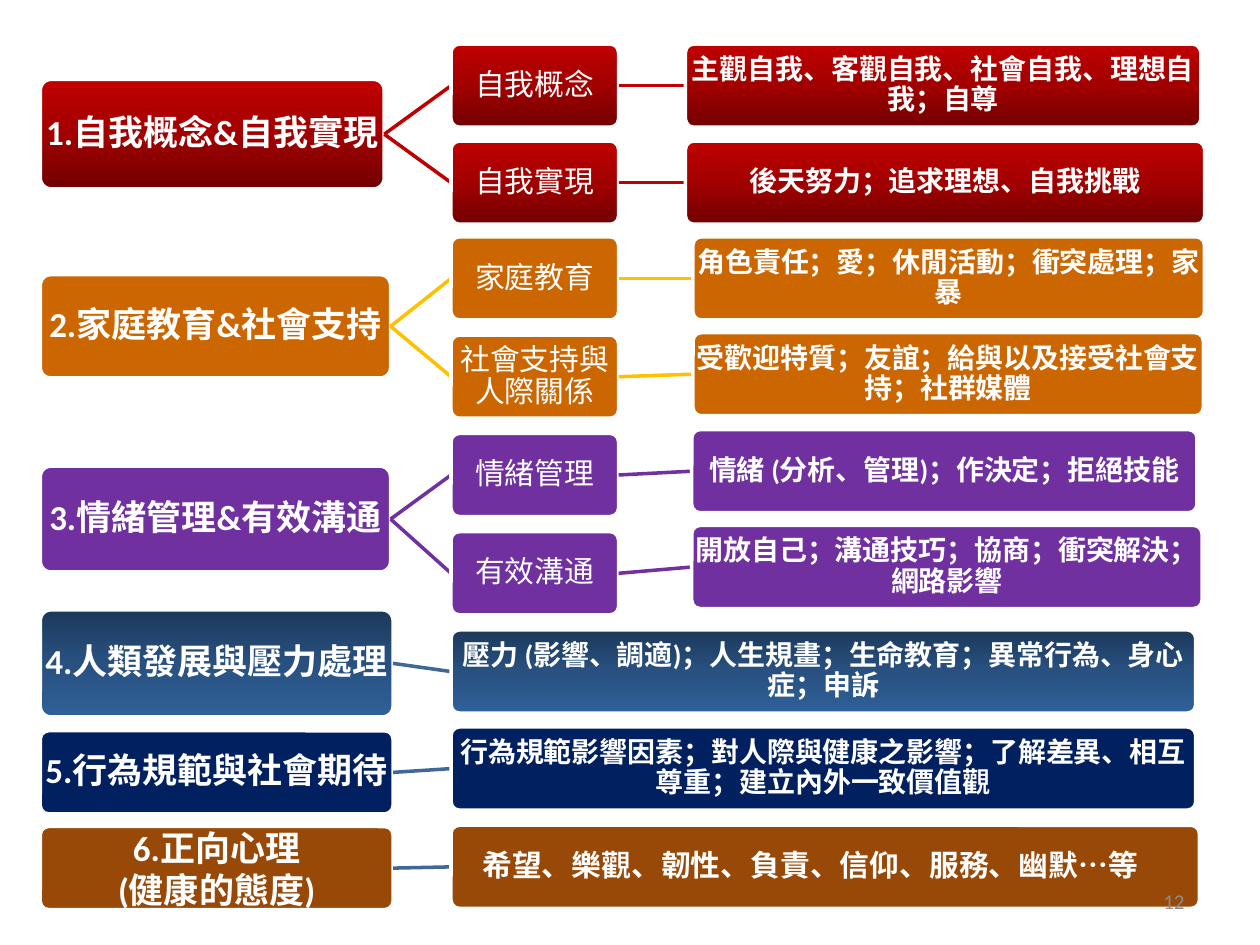
from lxml import etree
from pptx import Presentation
from pptx.dml.color import RGBColor
from pptx.enum.shapes import MSO_CONNECTOR, MSO_SHAPE
from pptx.enum.text import MSO_ANCHOR, PP_ALIGN
from pptx.oxml.ns import qn
from pptx.util import Pt

ROUNDED = MSO_SHAPE.ROUNDED_RECTANGLE
STRAIGHT = MSO_CONNECTOR.STRAIGHT
MIDDLE = MSO_ANCHOR.MIDDLE
CENTER, RIGHT = PP_ALIGN.CENTER, PP_ALIGN.RIGHT
LEFT_SIDE, RIGHT_SIDE = 1, 3

SCALE = 9144  # EMU per px, 100 px to the inch
TOPIC_X, BRANCH_X = 32, 358
BRANCH_WIDTH, ROW_HEIGHT = 133, 66

# Fills: a colour, or gradient colours (0, 50, 100 %) with an angle
RED = (("720000", "A20000", "C00000"), 90)
BLUE = (("1C395B", "285181", "306099"), 270)

# Topic text, top, width, height, fill, line colour, branches
# Branch: text, top, then detail text, left, top, width
SPLIT_TOPICS = [
    ("1.自我概念&自我實現", 63, 273, 87, RED, "C00000", [
        ("自我概念", 35, "主觀自我、客觀自我、社會自我、理想自我；自尊", 544, 35, 409),
        ("自我實現", 112, "後天努力；追求理想、自我挑戰", 544, 112, 412)]),
    ("2.家庭教育&社會支持", 218, 278, 82, "CC6600", "FFC000", [
        ("家庭教育", 188, "角色責任；愛；休閒活動；衝突處理；家暴", 550, 188, 406),
        ("社會支持與人際關係", 266, "受歡迎特質；友誼；給與以及接受社會支持；社群媒體", 550, 264, 405)]),
    ("3.情緒管理&有效溝通", 370, 278, 84, "7030A0", "7030A0", [
        ("情緒管理", 344, "情緒 (分析、管理)；作決定；拒絕技能", 549, 341, 401),
        ("有效溝通", 422, "開放自己；溝通技巧；協商；衝突解決；網路影響", 549, 417, 405)]),
]

# Topic text, top, height, line spacing, fill, detail text, top, width, size
SINGLE_TOPICS = [
    ("4.人類發展與壓力處理", 484, 85, 0.9, BLUE,
     "壓力 (影響、調適)；人生規畫；生命教育；異常行為、身心症；申訴", 500, 591, 16),
    ("5.行為規範與社會期待", 580, 66, 0.9, "002060",
     "行為規範影響因素；對人際與健康之影響；了解差異、相互尊重；建立內外一致價值觀", 577, 591, 16),
    ("6.正向心理\n(健康的態度)", 656, 66, 1.0, "984807",
     "希望、樂觀、韌性、負責、信仰、服務、幽默…等　", 655, 594, 17),
]


def px(length):
    return round(length * SCALE)


def color(value):
    return RGBColor.from_string(value)


class SlideBuilder:
    font = "Calibri"
    text_color = "FFFFFF"
    line_width = Pt(2)

    def __init__(self, slide):
        self.slide = slide

    def set_text(self, frame, text, size, bold, align, text_color, spacing=None):
        frame.word_wrap = True
        frame.vertical_anchor = MIDDLE
        frame.text = text
        for para in frame.paragraphs:
            para.alignment = align
            para.line_spacing = spacing
            para.font.name = self.font
            para.font.size = Pt(size)
            para.font.bold = bold
            para.font.color.rgb = color(text_color)

    def paint(self, box, fill):
        if isinstance(fill, str):
            box.fill.solid()
            box.fill.fore_color.rgb = color(fill)
            return
        stops, angle = fill
        box.fill.gradient()
        box.fill.gradient_angle = angle
        stop_list = next(box._element.spPr.iter(qn("a:gsLst")))
        for stop in list(stop_list):
            stop_list.remove(stop)
        for index, value in enumerate(stops):
            stop = etree.SubElement(stop_list, qn("a:gs"), pos=str(index * 50000))
            etree.SubElement(stop, qn("a:srgbClr"), val=value)

    def box(self, text, left, top, width, height, fill, size, bold=True, spacing=0.9):
        box = self.slide.shapes.add_shape(
            ROUNDED, px(left), px(top), px(width), px(height))
        box.adjustments[0] = 0.1
        box.shadow.inherit = False
        self.paint(box, fill)
        box.line.color.rgb = color("FFFFFF")
        box.line.width = self.line_width
        frame = box.text_frame
        frame.margin_left = frame.margin_right = 0
        frame.margin_top = frame.margin_bottom = px(1)
        self.set_text(frame, text, size, bold, CENTER, self.text_color, spacing)
        return box

    def child(self, parent, line_color, *box_values, **box_options):
        """Adds a box to the right of its parent, with the line behind it."""
        line = self.slide.shapes.add_connector(STRAIGHT, 0, 0, 0, 0)
        line.line.color.rgb = color(line_color)
        line.line.width = self.line_width
        etree.SubElement(line._element.spPr, qn("a:effectLst"))
        box = self.box(*box_values, **box_options)
        line.begin_connect(parent, RIGHT_SIDE)
        line.end_connect(box, LEFT_SIDE)
        return box

    def page_number(self, text, left, top, width, height):
        label = self.slide.shapes.add_textbox(px(left), px(top), px(width), px(height))
        self.set_text(label.text_frame, text, 12, False, RIGHT, "8C8C8C")


def main():
    deck = Presentation()
    deck.slide_width, deck.slide_height = px(1000), px(750)
    page = SlideBuilder(deck.slides.add_slide(deck.slide_layouts[6]))

    # Topics that split into two branches
    for text, top, width, height, fill, line_color, branches in SPLIT_TOPICS:
        topic = page.box(text, TOPIC_X, top, width, height, fill, 20)
        for name, branch_top, detail, left, detail_top, detail_width in branches:
            branch = page.child(topic, line_color, name, BRANCH_X, branch_top,
                                BRANCH_WIDTH, ROW_HEIGHT, fill, 17, bold=False)
            page.child(branch, line_color, detail, left, detail_top,
                       detail_width, ROW_HEIGHT, fill, 16)

    # Topics with one wide detail box
    for text, top, height, spacing, fill, detail, detail_top, width, size in SINGLE_TOPICS:
        topic = page.box(text, TOPIC_X, top, 280, height, fill, 20, spacing=spacing)
        page.child(topic, "3F6797", detail, BRANCH_X, detail_top,
                   width, ROW_HEIGHT, fill, size)

    page.page_number("12", 717, 695, 233, 40)
    deck.save("out.pptx")


if __name__ == "__main__":
    main()
